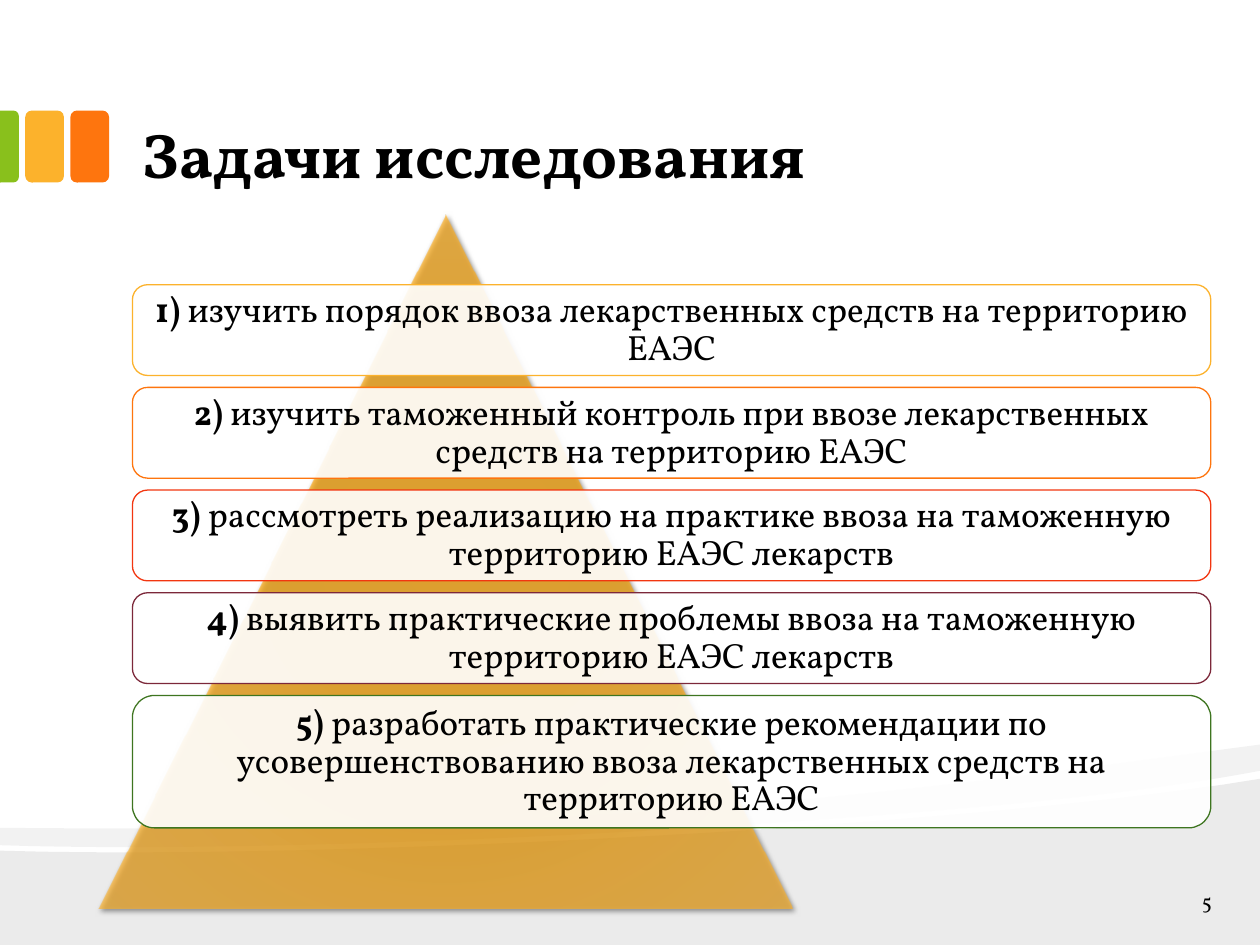
from dataclasses import dataclass

from lxml.etree import SubElement
from pptx import Presentation
from pptx.dml.color import RGBColor
from pptx.enum.shapes import MSO_SHAPE as SHAPE
from pptx.enum.text import MSO_ANCHOR as ANCHOR, PP_ALIGN as ALIGN
from pptx.oxml import parse_xml
from pptx.oxml.ns import nsdecls, qn
from pptx.util import Cm, Pt


@dataclass(frozen=True)
class Theme:
    font: str = "Vollkorn"
    title: int = 36
    body: int = 20
    small: int = 12
    black: str = "000000"
    white: str = "FFFFFF"
    green: str = "89C01C"
    amber: str = "FCB22C"
    orange: str = "FE750E"
    red: str = "F23610"
    wine: str = "7C283A"
    forest: str = "3E7520"
    glow: tuple = ((0, "FDA300"), (34, "FBA302"), (70, "FFAE1C"), (100, "FCB22C"))


T = Theme()

TASKS = [
    ("изучить порядок ввоза лекарственных средств на территорию ЕАЭС", T.amber, 1.83),
    ("изучить таможенный контроль при ввозе лекарственных средств на территорию ЕАЭС", T.orange, 1.83),
    ("рассмотреть реализацию на практике ввоза на таможенную территорию ЕАЭС лекарств", T.red, 1.83),
    ("выявить практические проблемы ввоза на таможенную территорию ЕАЭС лекарств", T.wine, 1.83),
    ("разработать практические рекомендации по усовершенствованию ввоза "
     "лекарственных средств на территорию ЕАЭС", T.forest, 2.67),
]


def paint(sp, color, alpha=100, line=None):
    sp.shadow.inherit = False
    sp.fill.solid()
    sp.fill.fore_color.rgb = RGBColor.from_string(color)
    if alpha < 100:
        clr = sp.fill._xPr.find(qn("a:solidFill"))[0]
        SubElement(clr, qn("a:alpha"), val=str(alpha * 1000))
    if line:
        sp.line.color.rgb = RGBColor.from_string(line)
        sp.line.width = Pt(0.75)
    else:
        sp.line.fill.background()


def add_shape(slide, kind, x, y, w, h):
    return slide.shapes.add_shape(kind, Cm(x), Cm(y), Cm(w), Cm(h))


def setup_text(tf, anchor, inset_x, inset_y):
    tf.word_wrap = True
    tf.vertical_anchor = anchor
    tf.margin_left = tf.margin_right = Cm(inset_x)
    tf.margin_top = tf.margin_bottom = Cm(inset_y)


def style(p, size, align):
    p.alignment = align
    p.font.name = T.font
    p.font.size = Pt(size)
    p.font.color.rgb = RGBColor.from_string(T.black)


def add_label(slide, box, text, size, align, anchor, bold=False):
    sp = slide.shapes.add_textbox(*map(Cm, box))
    setup_text(sp.text_frame, anchor, 0.33, 0.18)
    p = sp.text_frame.paragraphs[0]
    p.text = text
    style(p, size, align)
    p.font.bold = bold


def curve(p0, p1, p2, p3, steps=24):
    for i in range(1, steps + 1):
        t = i / steps
        u = 1 - t
        yield tuple(u**3 * a + 3 * u * u * t * b + 3 * u * t * t * c + t**3 * d
                    for a, b, c, d in zip(p0, p1, p2, p3))


def add_outline(slide, x, y, points, alpha):
    pts = [(Cm(x + px), Cm(y + py)) for px, py in points]
    builder = slide.shapes.build_freeform(*pts[0])
    builder.add_line_segments(pts[1:], close=True)
    paint(builder.convert_to_shape(), T.black, alpha)


def add_waves(slide, x, y, w, h):
    hill = [(w, h), (0, h), (0, 2.15),
            *curve((0, 2.15), (6.71, 2.35), (19.86, 1.64), (w, 0.7))]
    ribbon = [(w, 0.01), (w, 0.54),
              *curve((w, 0.54), (23.93, 0.82), (21.89, 1.08), (19.61, 1.28)),
              *curve((19.61, 1.28), (13.28, 1.84), (4.9, 2.2), (0, 2.04)),
              (0, 1.69),
              *curve((0, 1.69), (12.42, 1.81), (18.49, 0.93), (w, 0.01))]
    add_outline(slide, x, y, hill, 8)
    add_outline(slide, x, y, ribbon, 5)


def add_tabs(slide, x, y, w, h):
    tab, gap, cut = 0.78, 0.13, 0.38
    for i, color in enumerate((T.orange, T.amber)):
        left = x + w - tab - i * (tab + gap)
        paint(add_shape(slide, SHAPE.ROUNDED_RECTANGLE, left, y, tab, h), color)
    sp = add_shape(slide, SHAPE.ROUND_2_SAME_RECTANGLE,
                   x + (cut - h) / 2, y + (h - cut) / 2, h, cut)
    sp.rotation = 90
    sp.adjustments[0] = 0.29
    paint(sp, T.green)


def add_pyramid(slide, x, y, w, h):
    sp = add_shape(slide, SHAPE.ISOSCELES_TRIANGLE, x, y, w, h)
    paint(sp, T.amber)
    stops = "".join(f'<a:gs pos="{pos * 1000}"><a:srgbClr val="{color}">'
                    f'<a:alpha val="68000"/></a:srgbClr></a:gs>' for pos, color in T.glow)
    grad = parse_xml(
        f'<a:gradFill {nsdecls("a")} rotWithShape="1"><a:gsLst>{stops}</a:gsLst>'
        '<a:path path="circle"><a:fillToRect l="100000" t="100000" r="100000" b="100000"/>'
        '</a:path></a:gradFill>')
    pr = sp._element.spPr
    pr.replace(pr.find(qn("a:solidFill")), grad)
    shadow = parse_xml(
        f'<a:outerShdw {nsdecls("a")} blurRad="{Pt(3)}" dist="{Pt(2)}" dir="2700000" '
        f'rotWithShape="0"><a:srgbClr val="{T.black}"><a:alpha val="60000"/>'
        '</a:srgbClr></a:outerShdw>')
    pr.find(qn("a:effectLst")).append(shadow)


def add_tasks(slide, x, y, w, gap=0.24):
    for number, (text, color, h) in enumerate(TASKS, 1):
        sp = add_shape(slide, SHAPE.ROUNDED_RECTANGLE, x, y, w, h)
        paint(sp, T.white, 90, color)
        setup_text(sp.text_frame, ANCHOR.MIDDLE, 0.2, 0.2)
        p = sp.text_frame.paragraphs[0]
        style(p, T.body, ALIGN.CENTER)
        p.line_spacing = 0.9
        r = p.add_run()
        r.text = f"{number}) "
        r.font.bold = True
        p.add_run().text = text
        y += h + gap


def main():
    prs = Presentation()
    prs.slide_width, prs.slide_height = Cm(25.4), Cm(19.05)
    slide = prs.slides.add_slide(prs.slide_layouts[6])
    add_waves(slide, 0, 15, 25.4, 4.05)
    add_tabs(slide, 0, 2.23, 2.2, 1.45)
    add_label(slide, (2.54, 0.43, 20.32, 3.61), "Задачи исследования",
              T.title, ALIGN.LEFT, ANCHOR.BOTTOM, bold=True)
    add_pyramid(slide, 1.98, 4.32, 14, 14)
    add_tasks(slide, 2.67, 5.74, 21.74)
    add_label(slide, (23.06, 17.91, 1.7, 0.51), "5", T.small, ALIGN.RIGHT, ANCHOR.MIDDLE)
    prs.save("out.pptx")


if __name__ == "__main__":
    main()
